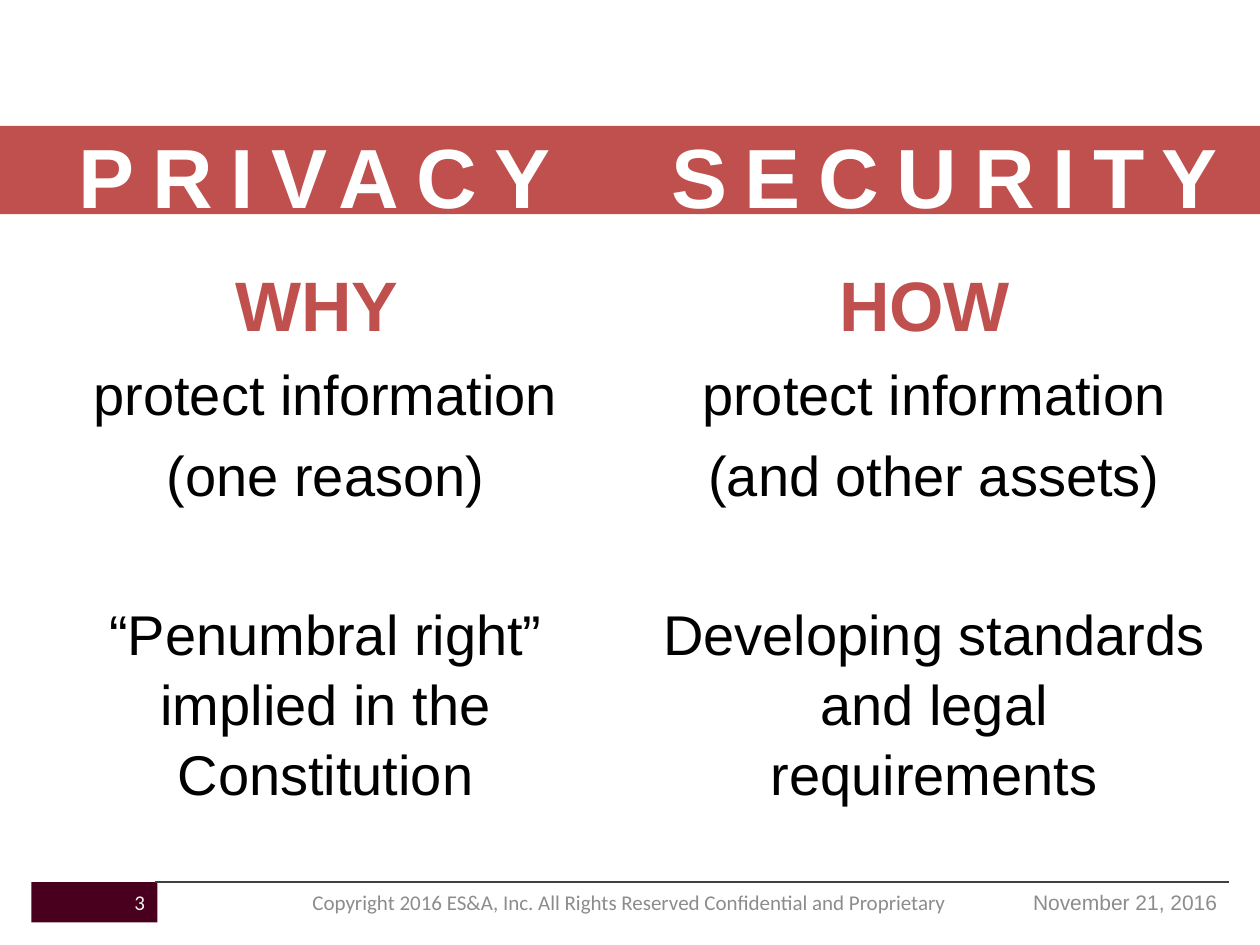
import pptx
import pptx.dml.color
import pptx.enum.shapes
import pptx.enum.text
import pptx.oxml
import pptx.oxml.ns
import pptx.util
from pptx.util import Inches

COLORS = {"band": "C0504D", "body": "000000", "white": "FFFFFF", "plum": "49001E",
          "rule": "404040", "footer": "8C8C8C", "number": "F2F2F2"}
ALIGN = pptx.enum.text.PP_ALIGN
FOOTER_TOP, FOOTER_HEIGHT = 7, 0.32


def rgb(name):
    """Return the named colour."""
    return pptx.dml.color.RGBColor.from_string(COLORS[name])


def add_band(slide, left, top, width, height, color):
    """Add a plain filled rectangle."""
    band = slide.shapes.add_shape(pptx.enum.shapes.MSO_SHAPE.RECTANGLE, Inches(left),
                                  Inches(top), Inches(width), Inches(height))
    band.shadow.inherit = False
    band.fill.solid()
    band.fill.fore_color.rgb = rgb(color)
    band.line.fill.background()
    return band


def add_area(slide, left, top, width, height):
    """Add an empty text box."""
    return slide.shapes.add_textbox(Inches(left), Inches(top), Inches(width), Inches(height))


def prepare_frame(area, top_margin=0.05):
    """Return the wrapped, vertically centred text frame of a shape."""
    frame = area.text_frame
    frame.word_wrap = True
    frame.vertical_anchor = pptx.enum.text.MSO_ANCHOR.MIDDLE
    frame.margin_top = Inches(top_margin)
    return frame


def write(paragraph, text, size=12, font="Arial", color="body", bold=False,
          align=ALIGN.CENTER, before=0, line_spacing=None, tracking=None):
    """Write formatted text into a paragraph."""
    paragraph.alignment = align
    paragraph.space_before = pptx.util.Pt(before)
    paragraph.line_spacing = line_spacing
    run = paragraph.add_run()
    run.text = text
    run.font.size = pptx.util.Pt(size)
    run.font.name = font
    run.font.bold = bold
    run.font.color.rgb = rgb(color)
    if tracking:
        run.font._element.set("spc", str(tracking * 100))


def add_column(slide, band_left, body_left, title, question, lines):
    """Add a titled band with a question and its answers below."""
    band = add_band(slide, band_left, 1, 5, 0.7, "band")
    write(prepare_frame(band, 0.13).paragraphs[0], title, size=48, color="white",
          bold=True, tracking=10)
    frame = prepare_frame(add_area(slide, body_left, 1.7, 4.67, 5), 0.1)
    write(frame.paragraphs[0], question, size=40, color="band", bold=True, line_spacing=1.04)
    for line, before in zip(lines, (6.4, 6.4, 51)):
        write(frame.add_paragraph(), line, size=32, before=before, line_spacing=1.04)


def add_rule(slide, left, right, top):
    """Add the thin horizontal footer line."""
    rule = slide.shapes.add_connector(pptx.enum.shapes.MSO_CONNECTOR.STRAIGHT, Inches(left),
                                      Inches(top), Inches(right), Inches(top))
    rule.line.color.rgb = rgb("rule")
    rule.line.width = pptx.util.Pt(0.75)
    rule._element.spPr.append(pptx.oxml.parse_xml(
        "<a:effectLst %s/>" % pptx.oxml.ns.nsdecls("a")))


def add_footer(slide, left, width, text, **style):
    """Add one text of the footer row."""
    area = add_area(slide, left, FOOTER_TOP, width, FOOTER_HEIGHT)
    write(prepare_frame(area).paragraphs[0], text, **style)


def main():
    """Build the slide and save it."""
    deck = pptx.Presentation()
    deck.slide_width, deck.slide_height = Inches(10), Inches(7.5)
    slide = deck.slides.add_slide(deck.slide_layouts[6])
    add_band(slide, 0.25, FOOTER_TOP, 1, FOOTER_HEIGHT, "plum")
    add_rule(slide, 1.23, 9.75, FOOTER_TOP)
    add_column(slide, 0, 0.25, "PRIVACY", "WHY ",
               ("protect information", "(one reason)",
                "“Penumbral right” implied in the Constitution"))
    add_column(slide, 5, 5.08, "SECURITY", "HOW ",
               ("protect information", "(and other assets)",
                "Developing standards and legal requirements"))
    add_footer(slide, 7.67, 2.09, "November 21, 2016", color="footer", align=ALIGN.RIGHT)
    add_footer(slide, 2.33, 5.33,
               "Copyright 2016 ES&A, Inc. All Rights Reserved Confidential and Proprietary",
               font="Calibri", color="footer")
    add_footer(slide, 0.25, 1, "3", font="Calibri", color="number", align=ALIGN.RIGHT)
    deck.save("out.pptx")


if __name__ == "__main__":
    main()
